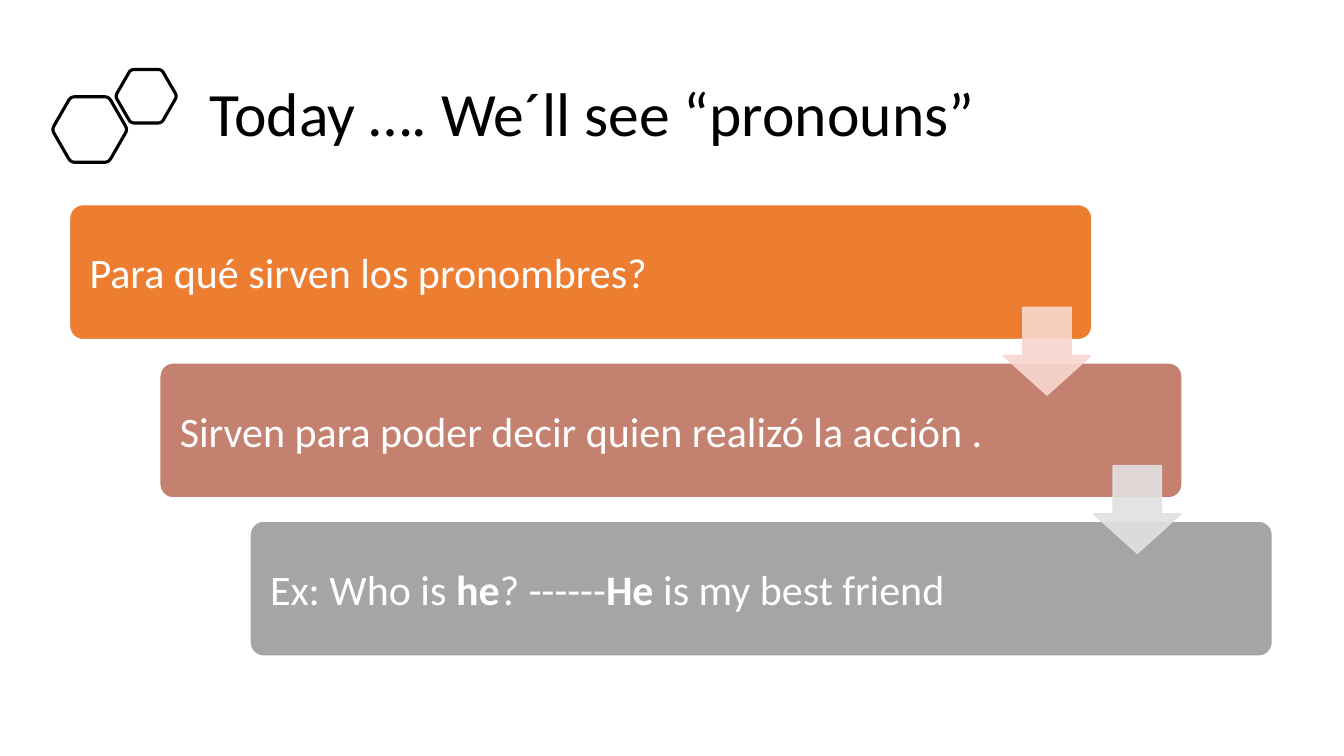
from math import sqrt

from lxml import etree
from pptx import Presentation
from pptx.dml.color import RGBColor
from pptx.enum.shapes import MSO_SHAPE
from pptx.enum.text import MSO_ANCHOR, PP_ALIGN
from pptx.oxml.ns import qn
from pptx.util import Inches, Pt

ROUND_RECT = MSO_SHAPE.ROUNDED_RECTANGLE
DOWN_ARROW = MSO_SHAPE.DOWN_ARROW
MIDDLE = MSO_ANCHOR.MIDDLE
LEFT = PP_ALIGN.LEFT

FONT = "Calibri"
SLIDE_W, SLIDE_H = 13.33, 7.5
STEP_X, STEP_Y = 0.895, 1.57
BOX_LEFT, BOX_TOP, BOX_W, BOX_H = 0.69, 2.03, 10.14, 1.34
ARROW_LEFT, ARROW_TOP, ARROW_SIZE = 9.95, 3.05, 0.87

# Each step: fill colour, then (text, bold) runs
STEPS = [
    ("ED7D31", [("Para qué sirven los pronombres?", False)]),
    ("C48170", [("Sirven para poder decir quien realizó la acción .", False)]),
    ("A5A5A5", [("Ex: Who is ", False), ("he", True), ("? ------", False),
                ("He", True), (" is my best friend", False)]),
]
ARROW_COLORS = ["F8D7CE", "E1E1E1"]


def rgb(hex_color):
    return RGBColor.from_string(hex_color)


def add_run(p, text, size, color, bold=False):
    r = p.add_run()
    r.text = text
    r.font.name = FONT
    r.font.size = Pt(size)
    r.font.bold = bold
    r.font.color.rgb = rgb(color)


def set_alpha(fill, percent):
    """Make a solid fill partly transparent."""
    for clr in fill.iter(qn("a:srgbClr")):
        etree.SubElement(clr, qn("a:alpha")).set("val", str(percent * 1000))


def add_preset(slide, kind, box, adjustments, fill, line):
    sp = slide.shapes.add_shape(kind, *(Inches(v) for v in box))
    sp.shadow.inherit = False
    for i, value in enumerate(adjustments):
        sp.adjustments[i] = value
    sp.fill.solid()
    sp.fill.fore_color.rgb = rgb(fill)
    sp.line.color.rgb = rgb(line)
    sp.line.width = Pt(1)
    return sp


def add_title(slide, text):
    sp = slide.shapes.title
    sp.left, sp.top, sp.width, sp.height = (
        Inches(v) for v in (1.98, 0.57, 10.81, 1.17))
    tf = sp.text_frame
    tf.vertical_anchor = MIDDLE
    p = tf.paragraphs[0]
    p.alignment = LEFT
    p.line_spacing = 0.9
    add_run(p, text, 44, "000000")


def add_hexagon(slide, center_x, center_y, height):
    """Draw an outlined regular hexagon with softened corners."""
    side = height / sqrt(3)
    corners = [(center_x + dx * side, center_y + dy * height / 2)
               for dx, dy in ((-1, 0), (-0.5, -1), (0.5, -1),
                              (1, 0), (0.5, 1), (-0.5, 1))]
    cut, points = 0.11, []
    for i, corner in enumerate(corners):
        before, after = corners[i - 1], corners[(i + 1) % 6]
        for t in (0, 0.25, 0.5, 0.75, 1):
            a, b = cut * (1 - t) ** 2, cut * t ** 2
            points.append(tuple(Inches(c + a * (m - c) + b * (n - c))
                                for c, m, n in zip(corner, before, after)))
    builder = slide.shapes.build_freeform(*points[0])
    builder.add_line_segments(points[1:], close=True)
    sp = builder.convert_to_shape()
    sp.shadow.inherit = False
    sp.fill.background()
    sp.line.color.rgb = rgb("000000")
    sp.line.width = Pt(2.25)


def add_step(slide, index, fill, runs):
    box = (BOX_LEFT + index * STEP_X, BOX_TOP + index * STEP_Y, BOX_W, BOX_H)
    sp = add_preset(slide, ROUND_RECT, box, [0.1], fill, "FFFFFF")
    tf = sp.text_frame
    tf.word_wrap = True
    tf.vertical_anchor = MIDDLE
    tf.margin_left = tf.margin_right = Inches(0.16)
    p = tf.paragraphs[0]
    p.alignment = LEFT
    for text, bold in runs:
        add_run(p, text, 30, "FFFFFF", bold)


def add_arrow(slide, index, color):
    box = (ARROW_LEFT + index * STEP_X, ARROW_TOP + index * STEP_Y,
           ARROW_SIZE, ARROW_SIZE)
    sp = add_preset(slide, DOWN_ARROW, box, [0.55, 0.45], color, color)
    set_alpha(sp.element.spPr, 90)


def main():
    prs = Presentation()
    prs.slide_width, prs.slide_height = Inches(SLIDE_W), Inches(SLIDE_H)
    slide = prs.slides.add_slide(prs.slide_layouts[5])
    add_title(slide, "Today …. We´ll see “pronouns”")
    add_hexagon(slide, 0.89, 1.285, 0.65)
    add_hexagon(slide, 1.45, 0.955, 0.53)
    for i, (fill, runs) in enumerate(STEPS):
        add_step(slide, i, fill, runs)
    for i, color in enumerate(ARROW_COLORS):
        add_arrow(slide, i, color)
    prs.save("out.pptx")


if __name__ == "__main__":
    main()
